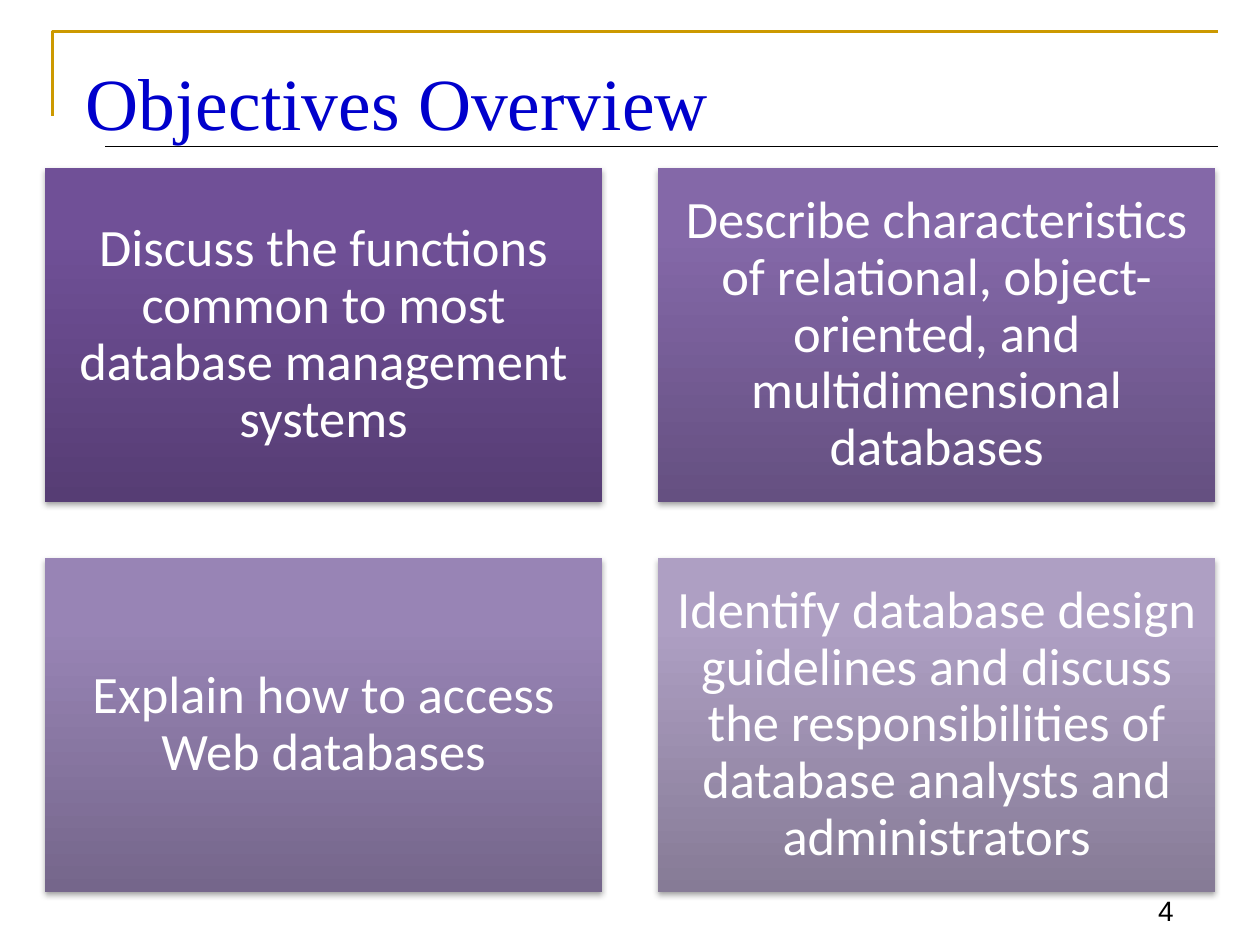
from lxml.etree import SubElement
from pptx import Presentation
from pptx.dml.color import RGBColor
from pptx.enum.dml import MSO_THEME_COLOR
from pptx.enum.shapes import MSO_CONNECTOR as CONN, MSO_SHAPE as SHAPE
from pptx.enum.text import MSO_ANCHOR as ANCHOR, MSO_AUTO_SIZE as AUTO, PP_ALIGN as ALIGN
from pptx.oxml import parse_xml
from pptx.oxml.ns import nsdecls, qn
from pptx.util import Cm, Pt

TITLE = "Objectives Overview"
PAGE = "4"
OBJECTIVES = [
    ("Discuss the functions common to most database management systems",
     ("563D74", "705097", "704F99")),
    ("Describe characteristics of relational, object-oriented, and "
     "multidimensional databases", ("655081", "8468A8", "8467AA")),
    ("Explain how to access Web databases", ("75668B", "9884B5", "9984B7")),
    ("Identify database design guidelines and discuss the responsibilities of "
     "database analysts and administrators", ("867B96", "AE9FC3", "AE9FC4")),
]
STOPS = (0, 80, 100)
COLUMNS = 2
LEFT, TOP, WIDTH, HEIGHT, GAP = 0.91, 3.39, 11.23, 6.73, 1.13


def color(value):
    return RGBColor.from_string(value)


def put_text(sp, text, *, size, font, fill, align=ALIGN.LEFT, anchor=ANCHOR.TOP,
             insets=(0.25, 0.13, 0.25, 0.13), spacing=None):
    tf = sp.text_frame
    tf.word_wrap, tf.auto_size, tf.vertical_anchor = True, AUTO.NONE, anchor
    tf.margin_left, tf.margin_top, tf.margin_right, tf.margin_bottom = map(Cm, insets)
    p = tf.paragraphs[0]
    p.alignment, p.line_spacing = align, spacing
    r = p.add_run()
    r.text = text
    r.font.size, r.font.name = Pt(size), font
    r.font.color.rgb = color(fill)


def style_line(sp, value, width):
    sp.line.color.rgb = color(value)
    sp.line.width = Pt(width)


def add_frame(slide):
    fb = slide.shapes.build_freeform(Cm(1.06), Cm(2.33))
    fb.add_line_segments([(Cm(1.06), Cm(0.64)), (Cm(24.55), Cm(0.64))], close=False)
    corner = fb.convert_to_shape()
    corner.shadow.inherit = False
    corner.fill.background()
    style_line(corner, "CC9900", 1.5)
    rule = slide.shapes.add_connector(CONN.STRAIGHT, Cm(2.12), Cm(2.96), Cm(24.55), Cm(2.96))
    style_line(rule, "000000", 0.75)
    SubElement(rule._element.spPr, qn("a:effectLst"))


def add_gradient(sp, colors):
    sp.fill.solid()
    sp.fill.fore_color.theme_color = MSO_THEME_COLOR.ACCENT_1
    stops = "".join(f'<a:gs pos="{pos * 1000}"><a:srgbClr val="{c}"/></a:gs>'
                    for pos, c in zip(STOPS, colors))
    spPr = sp._element.spPr
    spPr.replace(spPr.find(qn("a:solidFill")), parse_xml(
        f'<a:gradFill {nsdecls("a")} rotWithShape="1"><a:gsLst>{stops}</a:gsLst>'
        '<a:lin ang="16200000" scaled="0"/></a:gradFill>'))


def add_shadow(sp):
    sp.shadow.inherit = False
    effects = sp._element.spPr.find(qn("a:effectLst"))
    effects.append(parse_xml(
        f'<a:outerShdw {nsdecls("a")} blurRad="{Pt(3.1)}" dist="{Pt(1.8)}" '
        'dir="5400000" rotWithShape="0"><a:srgbClr val="000000">'
        '<a:alpha val="35000"/></a:srgbClr></a:outerShdw>'))


def add_objective(slide, index, text, colors):
    row, col = divmod(index, COLUMNS)
    sp = slide.shapes.add_shape(
        SHAPE.RECTANGLE, Cm(LEFT + col * (WIDTH + GAP)), Cm(TOP + row * (HEIGHT + GAP)),
        Cm(WIDTH), Cm(HEIGHT))
    sp.line.fill.background()
    add_gradient(sp, colors)
    add_shadow(sp)
    put_text(sp, text, size=30, font="Calibri", fill="FFFFFF", align=ALIGN.CENTER,
             anchor=ANCHOR.MIDDLE, insets=(0.3,) * 4, spacing=0.9)


def main():
    """Build the objectives slide and save it."""
    prs = Presentation()
    prs.slide_width, prs.slide_height = Cm(25.4), Cm(19.05)
    slide = prs.slides.add_slide(prs.slide_layouts[5])
    add_frame(slide)
    title = slide.shapes.title
    title.left, title.top, title.width, title.height = Cm(1.48), Cm(0.85), Cm(23.07), Cm(1.9)
    put_text(title, TITLE, size=42, font="Times New Roman", fill="0000CC",
             insets=(0.25, 0.29, 0.25, 0))
    for i, (text, colors) in enumerate(OBJECTIVES):
        add_objective(slide, i, text, colors)
    number = slide.shapes.add_textbox(Cm(22.23), Cm(17.57), Cm(1.68), Cm(1.25))
    put_text(number, PAGE, size=16, font="Arial", fill="000000",
             align=ALIGN.RIGHT, anchor=ANCHOR.BOTTOM)
    prs.save("out.pptx")


if __name__ == "__main__":
    main()
